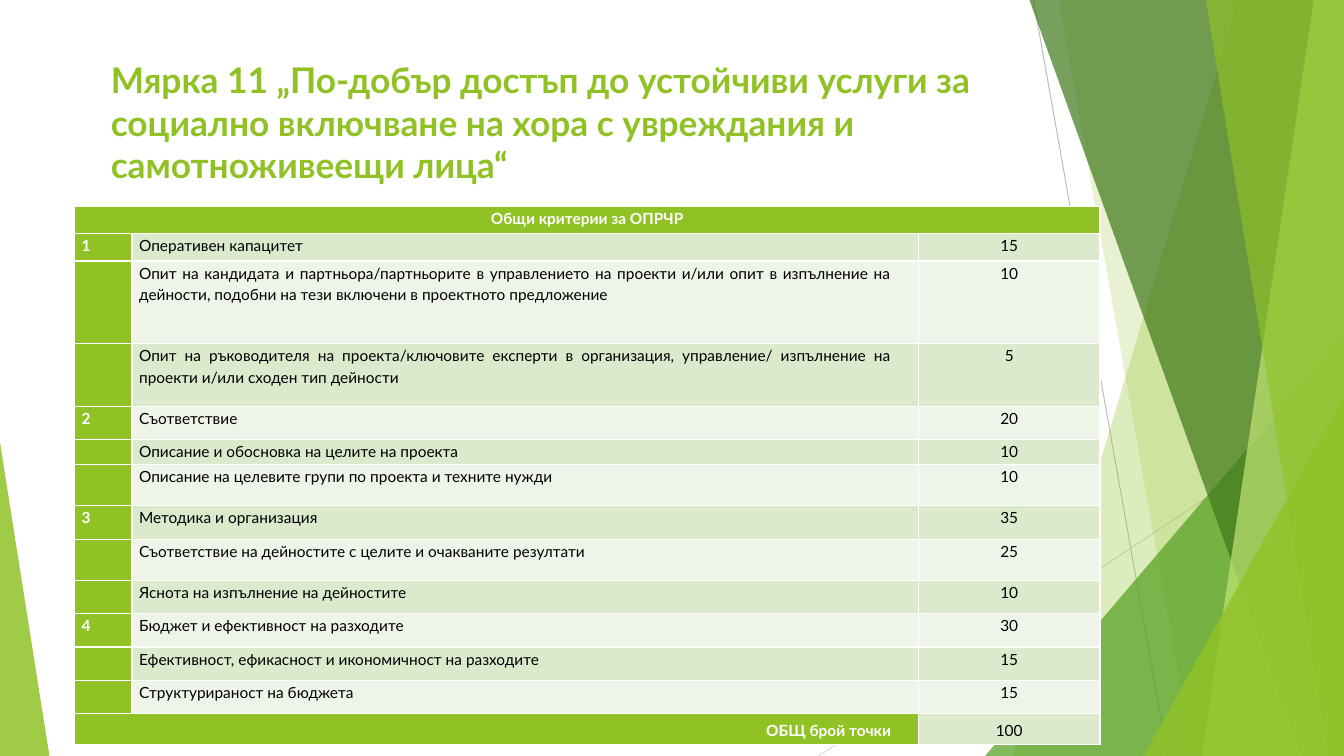
from dataclasses import dataclass

from lxml import etree
from pptx import Presentation
from pptx import util as u
from pptx.dml.color import RGBColor
from pptx.enum import shapes, text
from pptx.oxml.ns import qn

TITLE = ("Мярка 11 „По-добър достъп до устойчиви услуги за социално включване "
         "на хора с увреждания и самотноживеещи лица“")
HEADER = "Общи критерии за ОПРЧР"
TOTAL = ("ОБЩ брой точки", "100")
# number, criterion, points, row height
CRITERIA = [
    ("1", "Оперативен капацитет", "15", 0.27),
    ("", "Опит на кандидата и партньора/партньорите в управлението на проекти и/или "
         "опит в изпълнение на дейности, подобни на тези включени в проектното "
         "предложение", "10", 0.82),
    ("", "Опит на ръководителя на проекта/ключовите експерти в организация, управление/ "
         "изпълнение на проекти и/или сходен тип дейности", "5", 0.62),
    ("2", "Съответствие", "20", 0.33),
    ("", "Описание и обосновка на целите на проекта", "10", 0.25),
    ("", "Описание на целевите групи по проекта и техните нужди", "10", 0.41),
    ("3", "Методика и организация", "35", 0.33),
    ("", "Съответствие на дейностите с целите и очакваните резултати", "25", 0.41),
    ("", "Яснота на изпълнение на дейностите", "10", 0.33),
    ("4", "Бюджет и ефективност на разходите", "30", 0.33),
    ("", "Ефективност, ефикасност и икономичност на разходите", "15", 0.33),
    ("", "Структурираност на бюджета", "15", 0.33),
]
HEADER_HEIGHT, TOTAL_HEIGHT = 0.27, 0.31
COLUMNS = (0.57, 7.8, 1.8)
WIDTH, HEIGHT = 13.33, 7.5


@dataclass(frozen=True)
class Theme:
    font: str = "Lato"
    title_size: float = 25.2
    table_size: float = 11
    green: str = "90C226"
    leaf: str = "54A021"
    forest: str = "3F7819"
    lime: str = "C0E474"
    bands: tuple = ("EEF4E8", "DBE9CD")
    white: str = "FFFFFF"
    black: str = "000000"


THEME = Theme()
# start, end, colour
RAYS = [((10.25, 0), (11.58, HEIGHT), "BFBFBF"),
        ((WIDTH, 4.03), (8.12, HEIGHT), "D9D9D9")]
# Bands reach the right edge: x at the top, x at the bottom, colour, opacity.
# Corners stand on the bottom edge: left, width, height, apex, colour, opacity.
FACETS = [
    ("band", 12.28, 10.04, THEME.green, 30),
    ("band", 10.5, 11.83, THEME.green, 20),
    ("corner", 9.77, 3.56, 4.17, 1, THEME.leaf, 72),
    ("band", 10.21, 12.91, THEME.forest, 70),
    ("band", 13.03, 11.92, THEME.lime, 70),
    ("band", 11.96, 13.18, THEME.green, 65),
    ("corner", 11.34, 1.99, 3.57, 1, THEME.green, 80),
    ("corner", 0, 0.49, 3.11, 0, THEME.green, 85),
]


def paint(shape, colour, opacity):
    shape.shadow.inherit = False
    shape.line.fill.background()
    shape.fill.solid()
    shape.fill.fore_color.rgb = RGBColor.from_string(colour)
    tint = shape.fill._xPr.find(qn("a:solidFill"))[0]
    etree.SubElement(tint, qn("a:alpha")).set("val", str(opacity * 1000))


def add_ray(page, start, end, colour):
    ray = page.shapes.add_connector(shapes.MSO_CONNECTOR.STRAIGHT,
                                    *map(u.Inches, start + end))
    ray.line.color.rgb = RGBColor.from_string(colour)
    ray.line.width = u.Pt(0.75)
    etree.SubElement(ray._element.spPr, qn("a:effectLst"))


def add_band(page, top_x, bottom_x, colour, opacity):
    outline = page.shapes.build_freeform(u.Inches(top_x), 0)
    corners = [(WIDTH, 0), (WIDTH, HEIGHT), (bottom_x, HEIGHT)]
    outline.add_line_segments([(u.Inches(x), u.Inches(y)) for x, y in corners])
    paint(outline.convert_to_shape(), colour, opacity)


def add_corner(page, left, width, height, apex, colour, opacity):
    corner = page.shapes.add_shape(
        shapes.MSO_SHAPE.ISOSCELES_TRIANGLE,
        *map(u.Inches, (left, HEIGHT - height, width, height)))
    corner.adjustments[0] = apex
    paint(corner, colour, opacity)


def style(para, size, colour, bold):
    para.font.name = THEME.font
    para.font.size = u.Pt(size)
    para.font.bold = bold
    para.font.color.rgb = RGBColor.from_string(colour)


def add_title(page):
    box = page.shapes.add_textbox(*map(u.Inches, (1, 0.53, 9.92, 1.42)))
    box.text_frame.word_wrap = True
    box.text_frame.vertical_anchor = text.MSO_ANCHOR.TOP
    para = box.text_frame.paragraphs[0]
    para.text = TITLE
    style(para, THEME.title_size, THEME.green, True)


def fill_cell(cell, words, fill, align, right=0.07):
    """Write one cell; green cells carry bold white text."""
    cell.fill.solid()
    cell.fill.fore_color.rgb = RGBColor.from_string(fill)
    cell.margin_left, cell.margin_right = u.Inches(0.07), u.Inches(right)
    cell.margin_top = cell.margin_bottom = 0
    para = cell.text_frame.paragraphs[0]
    para.text = words
    para.alignment = align
    para.line_spacing = 1.15
    strong = fill == THEME.green
    style(para, THEME.table_size, THEME.white if strong else THEME.black, strong)


def add_criteria(page):
    heights = [HEADER_HEIGHT, *(row[-1] for row in CRITERIA), TOTAL_HEIGHT]
    table = page.shapes.add_table(
        len(heights), len(COLUMNS),
        *map(u.Inches, (0.74, 2.05, sum(COLUMNS), sum(heights)))).table
    for column, width in zip(table.columns, COLUMNS):
        column.width = u.Inches(width)
    for row, height in zip(table.rows, heights):
        row.height = u.Inches(height)

    align, inset = text.PP_ALIGN, 0.27
    last = len(heights) - 1
    table.cell(0, 0).merge(table.cell(0, 2))
    table.cell(last, 0).merge(table.cell(last, 1))
    fill_cell(table.cell(0, 0), HEADER, THEME.green, align.CENTER)
    for index, (number, criterion, points, _) in enumerate(CRITERIA, 1):
        band = THEME.bands[index % 2]
        fill_cell(table.cell(index, 0), number, THEME.green, align.JUSTIFY)
        fill_cell(table.cell(index, 1), criterion, band, align.JUSTIFY, inset)
        fill_cell(table.cell(index, 2), points, band, align.CENTER)
    fill_cell(table.cell(last, 0), TOTAL[0], THEME.green, align.RIGHT, inset)
    fill_cell(table.cell(last, 2), TOTAL[1], THEME.bands[last % 2], align.CENTER)
    for column in (0, 2):
        table.cell(last, column).vertical_anchor = text.MSO_ANCHOR.MIDDLE


def main():
    deck = Presentation()
    deck.slide_width, deck.slide_height = u.Inches(WIDTH), u.Inches(HEIGHT)
    page = deck.slides.add_slide(deck.slide_layouts[6])
    for ray in RAYS:
        add_ray(page, *ray)
    draw = {"band": add_band, "corner": add_corner}
    for kind, *facet in FACETS:
        draw[kind](page, *facet)
    add_title(page)
    add_criteria(page)
    deck.save("out.pptx")


if __name__ == "__main__":
    main()
